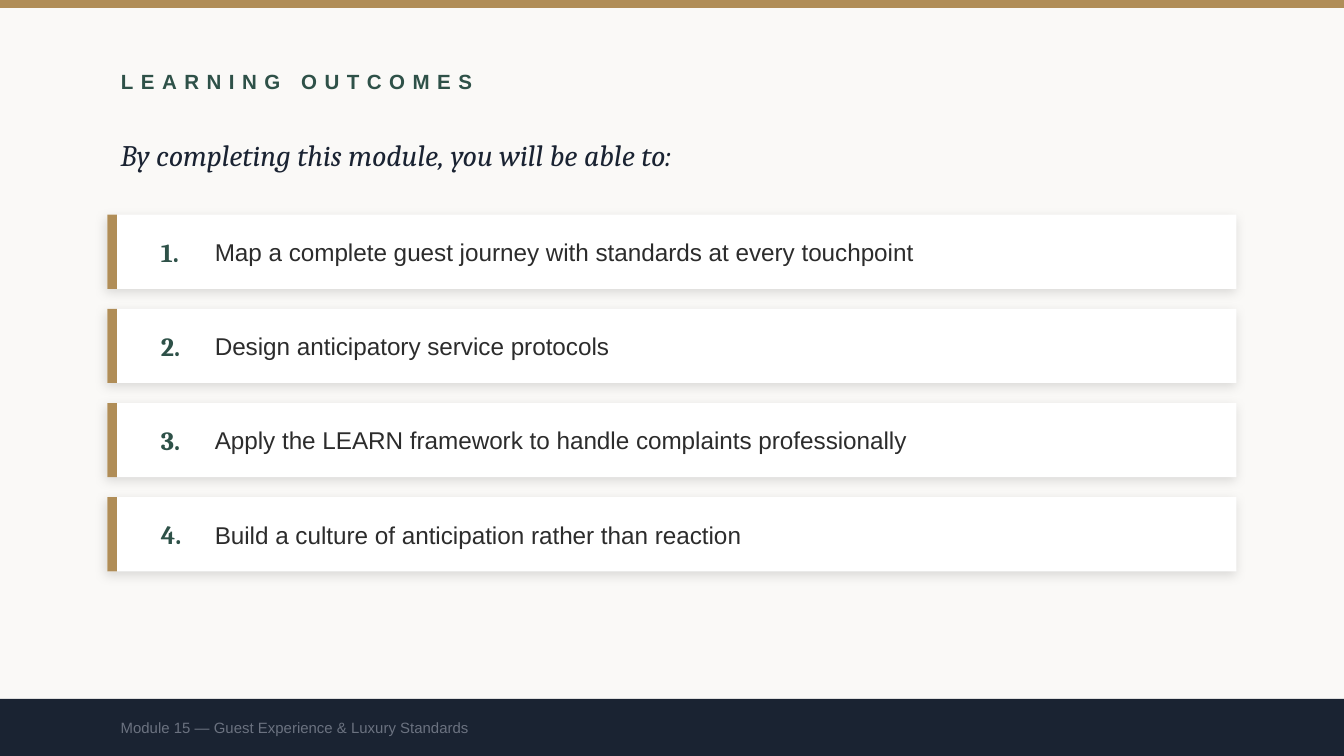
from lxml import etree
from pptx import Presentation
from pptx.dml.color import RGBColor
from pptx.enum import shapes, text
from pptx.oxml import ns
from pptx.util import Cm, Pt

TITLE = "LEARNING OUTCOMES"
INTRO = "By completing this module, you will be able to:"
OUTCOMES = [
    "Map a complete guest journey with standards at every touchpoint",
    "Design anticipatory service protocols",
    "Apply the LEARN framework to handle complaints professionally",
    "Build a culture of anticipation rather than reaction",
]
FOOTER = "Module 15 — Guest Experience & Luxury Standards"

SANS, SERIF = "Arial", "Cambria"
PAPER, WHITE, GOLD, GREEN = "FAF9F7", "FFFFFF", "B08D57", "2E5148"
NAVY, INK, GREY = "1A2332", "2C2C2C", "6B7280"

# Lengths in centimetres
WIDTH, HEIGHT = 25.4, 14.29
LEFT, TEXT_WIDTH = 2.03, 20.32
CARD_TOP, CARD_WIDTH, CARD_HEIGHT, CARD_PITCH = 4.06, 21.34, 1.4, 1.78
FOOTER_TOP = 13.21


def set_color(color_format, color):
    color_format.rgb = RGBColor.from_string(color)


def add_bar(slide, left, top, width, height, color):
    bar = slide.shapes.add_shape(
        shapes.MSO_SHAPE.RECTANGLE, Cm(left), Cm(top), Cm(width), Cm(height))
    bar.shadow.inherit = False
    bar.fill.solid()
    set_color(bar.fill.fore_color, color)
    bar.line.fill.background()
    return bar


def add_soft_shadow(shape):
    effects = shape._element.spPr.find(ns.qn("a:effectLst"))
    shadow = etree.SubElement(
        effects, ns.qn("a:outerShdw"), blurRad=str(Pt(6)), dist=str(Pt(2)),
        dir=str(135 * 60000), algn="bl", rotWithShape="0")
    color = etree.SubElement(shadow, ns.qn("a:srgbClr"), val="000000")
    etree.SubElement(color, ns.qn("a:alpha"), val="12000")


def write(shape, words, size, font, color, bold=False, italic=False):
    """Fill a text shape with one left-aligned, vertically centred run."""
    frame = shape.text_frame
    frame.word_wrap = True
    frame.auto_size = text.MSO_AUTO_SIZE.NONE
    frame.vertical_anchor = text.MSO_ANCHOR.MIDDLE
    paragraph = frame.paragraphs[0]
    paragraph.alignment = text.PP_ALIGN.LEFT
    run = paragraph.add_run()
    run.text = words
    run.font.size, run.font.name = Pt(size), font
    run.font.bold, run.font.italic = bold, italic
    set_color(run.font.color, color)
    return run


def add_text(slide, left, top, width, height, *words_and_style, **emphasis):
    box = slide.shapes.add_textbox(Cm(left), Cm(top), Cm(width), Cm(height))
    write(box, *words_and_style, **emphasis)


def add_outcome(slide, index, outcome):
    top = CARD_TOP + index * CARD_PITCH
    card = add_bar(slide, LEFT, top, CARD_WIDTH, CARD_HEIGHT, WHITE)
    add_soft_shadow(card)
    add_bar(slide, LEFT, top, 0.18, CARD_HEIGHT, GOLD)
    add_text(slide, 2.79, top, 1.02, CARD_HEIGHT,
             f"{index + 1}.", 14, SERIF, GREEN, bold=True)
    add_text(slide, 3.81, top, 18.8, CARD_HEIGHT, outcome, 13, SANS, INK)


def main():
    presentation = Presentation()
    presentation.slide_width, presentation.slide_height = Cm(WIDTH), Cm(HEIGHT)
    slide = presentation.slides.add_slide(presentation.slide_layouts[5])
    slide.background.fill.solid()
    set_color(slide.background.fill.fore_color, PAPER)

    add_bar(slide, 0, 0, WIDTH, 0.15, GOLD)
    title = slide.shapes.title
    title.left, title.top = Cm(LEFT), Cm(1.02)
    title.width, title.height = Cm(TEXT_WIDTH), Cm(1.02)
    run = write(title, TITLE, 11, SANS, GREEN, bold=True)
    run._r.get_or_add_rPr().set("spc", "400")
    add_text(slide, LEFT, 2.29, TEXT_WIDTH, 1.27, INTRO, 16, SERIF, NAVY, italic=True)

    for index, outcome in enumerate(OUTCOMES):
        add_outcome(slide, index, outcome)

    footer_height = HEIGHT - FOOTER_TOP
    add_bar(slide, 0, FOOTER_TOP, WIDTH, footer_height, NAVY)
    add_text(slide, LEFT, FOOTER_TOP, TEXT_WIDTH, footer_height, FOOTER, 8, SANS, GREY)
    presentation.save("out.pptx")


if __name__ == "__main__":
    main()
